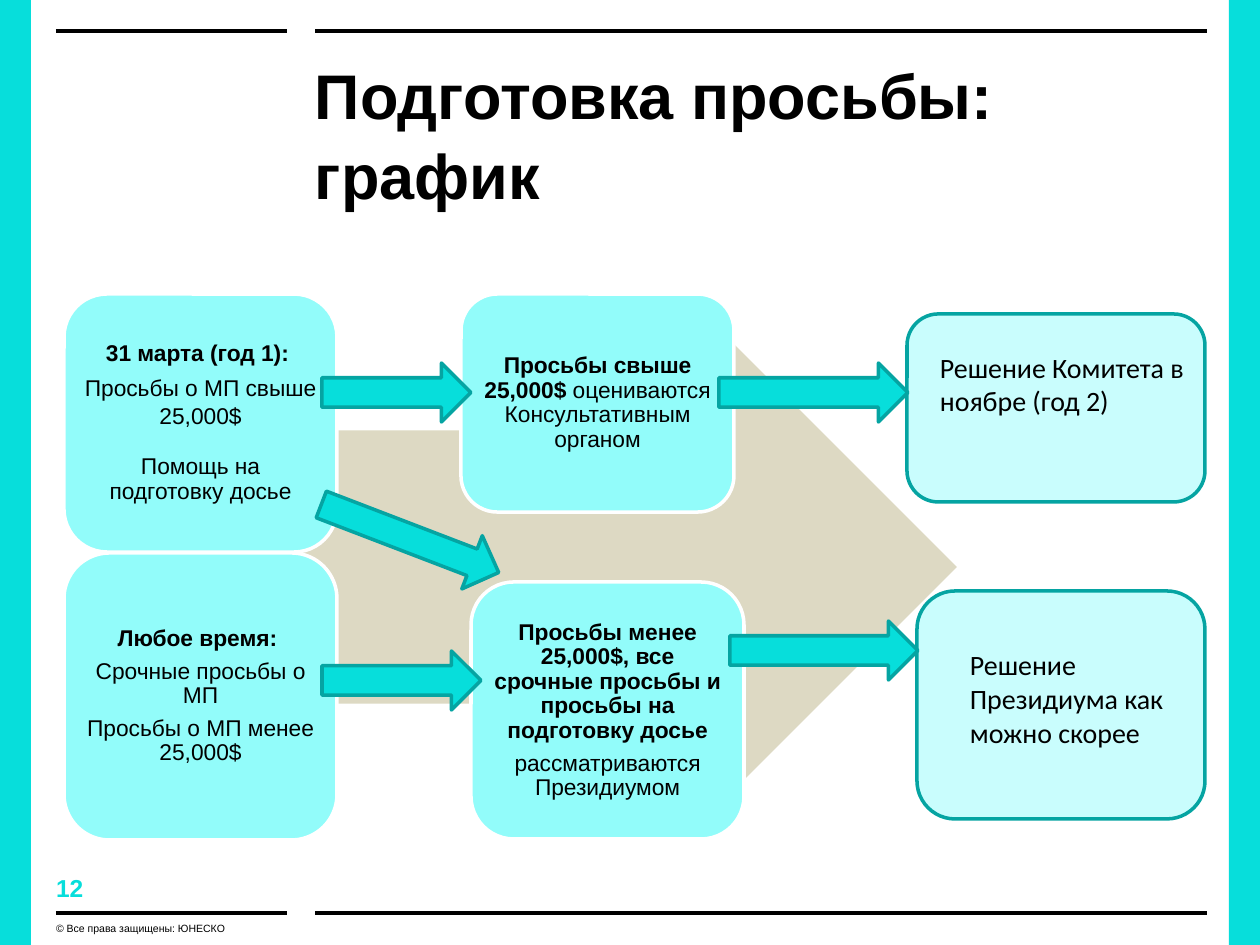
"""Build the request preparation timeline slide."""
from lxml import etree
from pptx import Presentation, util as u
from pptx.dml.color import RGBColor
from pptx.enum import shapes, text
from pptx.oxml.ns import qn

C = {"accent": "07DEDB", "edge": "05A4A2", "step": "92FCFA", "decision": "C9FDFD",
     "sand": "DDD9C3", "black": "000000", "white": "FFFFFF"}
KIND = shapes.MSO_SHAPE
STEP = {"alignment": text.PP_ALIGN.CENTER, "line_spacing": 0.9, "space_after": u.Pt(4.5)}
PLAIN = {"alignment": text.PP_ALIGN.CENTER}
AFTER_GAP = {**STEP, "space_before": u.Pt(15)}


class Deck:
    """Hold the style and the current slide, and draw each kind of element."""

    def __init__(self, width, height):
        self.prs = Presentation()
        self.prs.slide_width, self.prs.slide_height = self.px(width), self.px(height)
        self.s = self.prs.slides.add_slide(self.prs.slide_layouts[6])

    def px(self, n):
        return u.Emu(round(n * 914400 / 126))

    def color(self, name):
        return RGBColor.from_string(C[name])

    def shape(self, kind, box, fill, line=None, rotation=0):
        sp = self.s.shapes.add_shape(kind, *map(self.px, box))
        sp.shadow.inherit = False
        sp.rotation = rotation
        sp.fill.solid()
        sp.fill.fore_color.rgb = self.color(fill)
        if line:
            sp.line.color.rgb = self.color(line)
            sp.line.width = u.Pt(2)
        else:
            sp.line.fill.background()
        return sp

    def rule(self, x1, x2, y):
        ln = self.s.shapes.add_connector(shapes.MSO_CONNECTOR.STRAIGHT,
                                         *map(self.px, (x1, y, x2, y)))
        ln.line.color.rgb = self.color("black")
        ln.line.width = u.Pt(2)
        etree.SubElement(ln._element.spPr, qn("a:effectLst"))

    def fill_text(self, sp, paragraphs, inset, size, font="Arial", color="black",
                  anchor=text.MSO_ANCHOR.TOP):
        tf = sp.text_frame
        x, y = map(self.px, inset)
        frame = {"word_wrap": True, "vertical_anchor": anchor, "margin_left": x,
                 "margin_right": x, "margin_top": y, "margin_bottom": y}
        for name, value in frame.items():
            setattr(tf, name, value)
        for i, (runs, fmt) in enumerate(paragraphs):
            p = tf.add_paragraph() if i else tf.paragraphs[0]
            for name, value in fmt.items():
                setattr(p, name, value)
            for words, bold in runs:
                r = p.add_run()
                r.text = words
                style = {"name": font, "size": u.Pt(size), "bold": bold}
                for name, value in style.items():
                    setattr(r.font, name, value)
                r.font.color.rgb = self.color(color)

    def label(self, box, words, size, bold=False, inset=(0, 0), fmt=None, **style):
        sp = self.s.shapes.add_textbox(*map(self.px, box))
        self.fill_text(sp, [([(words, bold)], fmt or {})], inset, size, **style)

    def step(self, box, paragraphs):
        sp = self.shape(KIND.ROUNDED_RECTANGLE, box, "step", "white")
        self.fill_text(sp, paragraphs, (6, 6), 13, anchor=text.MSO_ANCHOR.MIDDLE)

    def decision(self, box, text_box, words):
        self.shape(KIND.ROUNDED_RECTANGLE, box, "decision", "edge")
        self.label(text_box, words, 16, inset=(13, 6), font="Calibri")

    def arrow(self, box, rotation=0):
        self.shape(KIND.RIGHT_ARROW, box, "accent", "edge", rotation)


def main():
    d = Deck(1260, 945)
    for x in (0, 1229):
        d.shape(KIND.RECTANGLE, (x, 0, 31, 945), "accent")
    for y in (31, 913):
        d.rule(56, 287, y)
        d.rule(315, 1207, y)
    d.label((315, 52, 892, 152), "Подготовка просьбы: график", 36, True,
            fmt={"line_spacing": 1.06})
    d.label((56, 873, 144, 30), "12", 14, True, color="accent")
    d.label((56, 922, 231, 22), "© Все права защищены: ЮНЕСКО", 6)

    d.shape(KIND.RIGHT_ARROW, (302, 294, 655, 546), "sand")
    d.step((64, 294, 273, 258), [
        ([("31 марта (год 1): ", True)], STEP),
        ([("Просьбы о МП свыше 25,000$", False)], PLAIN),
        ([("Помощь на подготовку досье", False)], AFTER_GAP)])
    d.step((64, 553, 273, 287), [
        ([("Любое время: ", True)], STEP),
        ([("Срочные просьбы о МП", False)], STEP),
        ([("Просьбы о МП менее 25,000$", False)], STEP)])
    d.step((471, 582, 273, 257), [
        ([("Просьбы менее 25,000$, все срочные просьбы и просьбы на подготовку досье",
           True)], STEP),
        ([("рассматриваются Президиумом", False)], STEP)])
    d.step((461, 294, 273, 218), [
        ([("Просьбы свыше 25,000$ ", True),
          ("оцениваются Консультативным органом", False)], STEP)])

    d.decision((917, 591, 288, 228), (957, 642, 228, 115),
               "Решение Президиума как можно скорее")
    d.decision((907, 314, 298, 188), (927, 344, 278, 81),
               "Решение Комитета в ноябре (год 2)")

    for x, y, width in ((322, 363, 149), (719, 363, 189), (322, 651, 159), (730, 621, 188)):
        d.arrow((x, y, width, 59))
    d.arrow((315, 510, 190, 57), rotation=21)
    d.prs.save("out.pptx")


if __name__ == "__main__":
    main()
